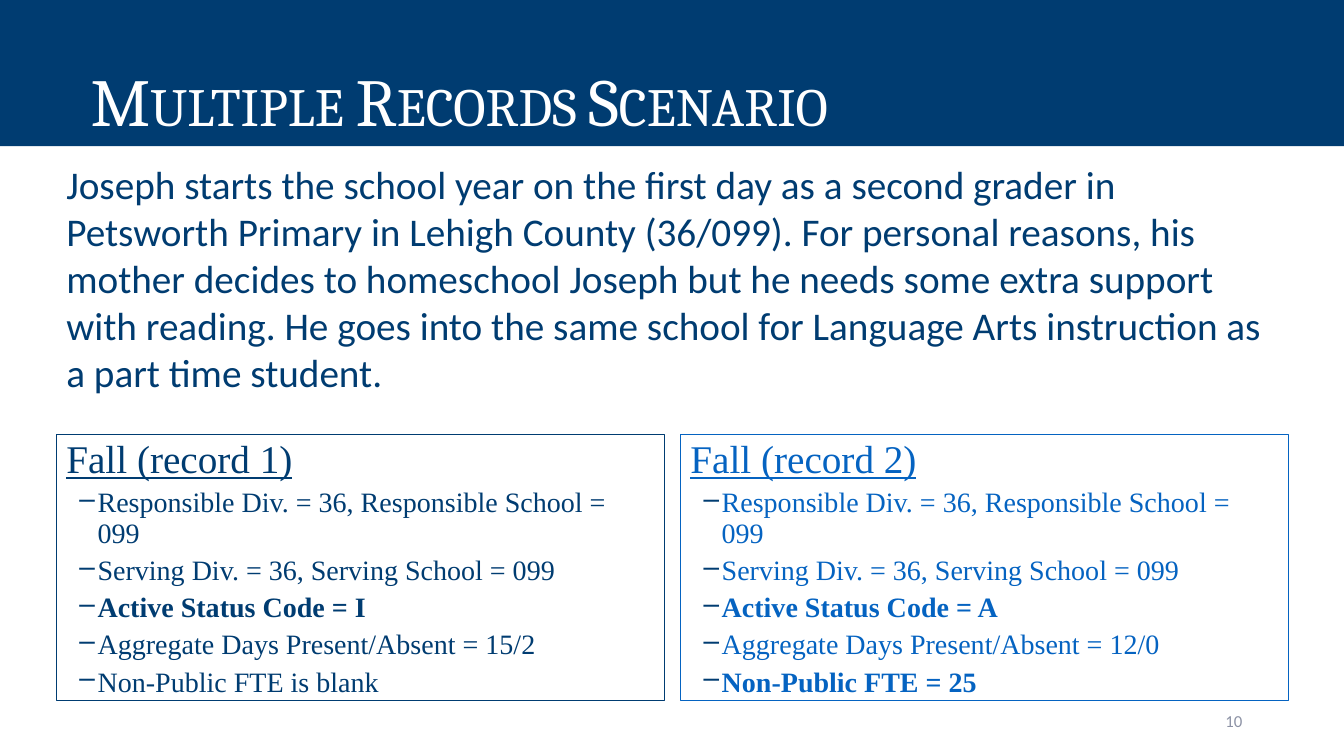
from pptx import Presentation
from pptx.dml.color import RGBColor
from pptx.enum.shapes import MSO_SHAPE as SHAPE
from pptx.enum.text import MSO_ANCHOR as ANCHOR, PP_ALIGN as ALIGN
from pptx.oxml import parse_xml
from pptx.oxml.ns import nsdecls
from pptx.util import Inches, Pt

NAVY, BLUE, WHITE, GREY = "003C71", "0563C1", "FFFFFF", "8C92A5"
MARGIN = 0.56

STORY = (
    "Joseph starts the school year on the first day as a second grader in "
    "Petsworth Primary in Lehigh County (36/099). For personal reasons, his "
    "mother decides to homeschool Joseph but he needs some extra support with "
    "reading. He goes into the same school for Language Arts instruction as a "
    "part time student."
)

# Heading, colour, status code, days present/absent, FTE text, FTE in bold
RECORDS = [
    ("Fall (record 1)", NAVY, "I", "15/2", "is blank", False),
    ("Fall (record 2)", BLUE, "A", "12/0", "= 25", True),
]


def rgb(color):
    return RGBColor.from_string(color)


def set_font(p, name, size, color, bold=False, underline=False):
    p.font.name, p.font.size = name, Pt(size)
    p.font.color.rgb = rgb(color)
    p.font.bold, p.font.underline = bold, underline


def add_rect(slide, x, y, w, h, fill=None, line=None):
    sp = slide.shapes.add_shape(
        SHAPE.RECTANGLE, Inches(x), Inches(y), Inches(w), Inches(h))
    sp.shadow.inherit = False
    if fill:
        sp.fill.solid()
        sp.fill.fore_color.rgb = rgb(fill)
    else:
        sp.fill.background()
    if line:
        sp.line.color.rgb = rgb(line)
        sp.line.width = Pt(0.75)
    else:
        sp.line.fill.background()
    return sp


def add_text(slide, x, y, w, h, text, size, color, align=ALIGN.LEFT, anchor=ANCHOR.TOP):
    tf = slide.shapes.add_textbox(
        Inches(x), Inches(y), Inches(w), Inches(h)).text_frame
    tf.word_wrap = True
    tf.vertical_anchor = anchor
    p = tf.paragraphs[0]
    p.text, p.alignment = text, align
    set_font(p, "Calibri", size, color)


def add_title(slide, text):
    tf = add_rect(slide, 0, 0, 13.33, 1.45, fill=NAVY).text_frame
    tf.word_wrap = True
    tf.vertical_anchor = ANCHOR.BOTTOM
    tf.margin_left = Inches(0.9)
    p = tf.paragraphs[0]
    p.alignment, p.line_spacing = ALIGN.LEFT, 0.9
    set_font(p, "Cambria", 48, WHITE)
    r = p.add_run()
    r.text = text
    r._r.get_or_add_rPr().set("cap", "small")


def add_dash(p):
    pPr = p._p.get_or_add_pPr()
    pPr.set("marL", str(Inches(0.31)))
    pPr.set("indent", str(Inches(-0.18)))
    bullet = [
        f'<a:buClr {nsdecls("a")}><a:srgbClr val="{NAVY}"/></a:buClr>',
        f'<a:buChar {nsdecls("a")} char="–"/>',
    ]
    # Bullets come before the default run properties
    for xml in bullet:
        pPr.insert_element_before(parse_xml(xml), "a:tabLst", "a:defRPr", "a:extLst")


def add_record(slide, x, heading, color, status, days, fte, fte_bold):
    tf = add_rect(slide, x, 4.31, 6.03, 2.64, line=color).text_frame
    tf.word_wrap = True
    tf.vertical_anchor = ANCHOR.TOP
    items = [
        ("Responsible Div. = 36, Responsible School = 099", False),
        ("Serving Div. = 36, Serving School = 099", False),
        (f"Active Status Code = {status}", True),
        (f"Aggregate Days Present/Absent = {days}", False),
        (f"Non-Public FTE {fte}", fte_bold),
    ]
    p = tf.paragraphs[0]
    p.text = heading
    set_font(p, "Times New Roman", 28, color, underline=True)
    for text, bold in items:
        p = tf.add_paragraph()
        p.text, p.level = text, 1
        set_font(p, "Times New Roman", 20, color, bold)
        add_dash(p)
    for p in tf.paragraphs:
        p.alignment, p.line_spacing, p.space_before = ALIGN.LEFT, 0.9, Pt(5)


def main():
    prs = Presentation()
    prs.slide_width, prs.slide_height = Inches(13.33), Inches(7.5)
    slide = prs.slides.add_slide(prs.slide_layouts[6])

    # Title band and page number
    add_title(slide, "Multiple Records Scenario")
    add_text(slide, 9.42, 6.95, 3, 0.4, "10", 12, GREY, ALIGN.RIGHT, ANCHOR.MIDDLE)

    # Two records side by side
    for i, record in enumerate(RECORDS):
        add_record(slide, MARGIN + i * 6.19, *record)

    # Scenario
    add_text(slide, MARGIN, 1.54, 12.22, 2.46, STORY, 28, NAVY)

    prs.save("out.pptx")


if __name__ == "__main__":
    main()
